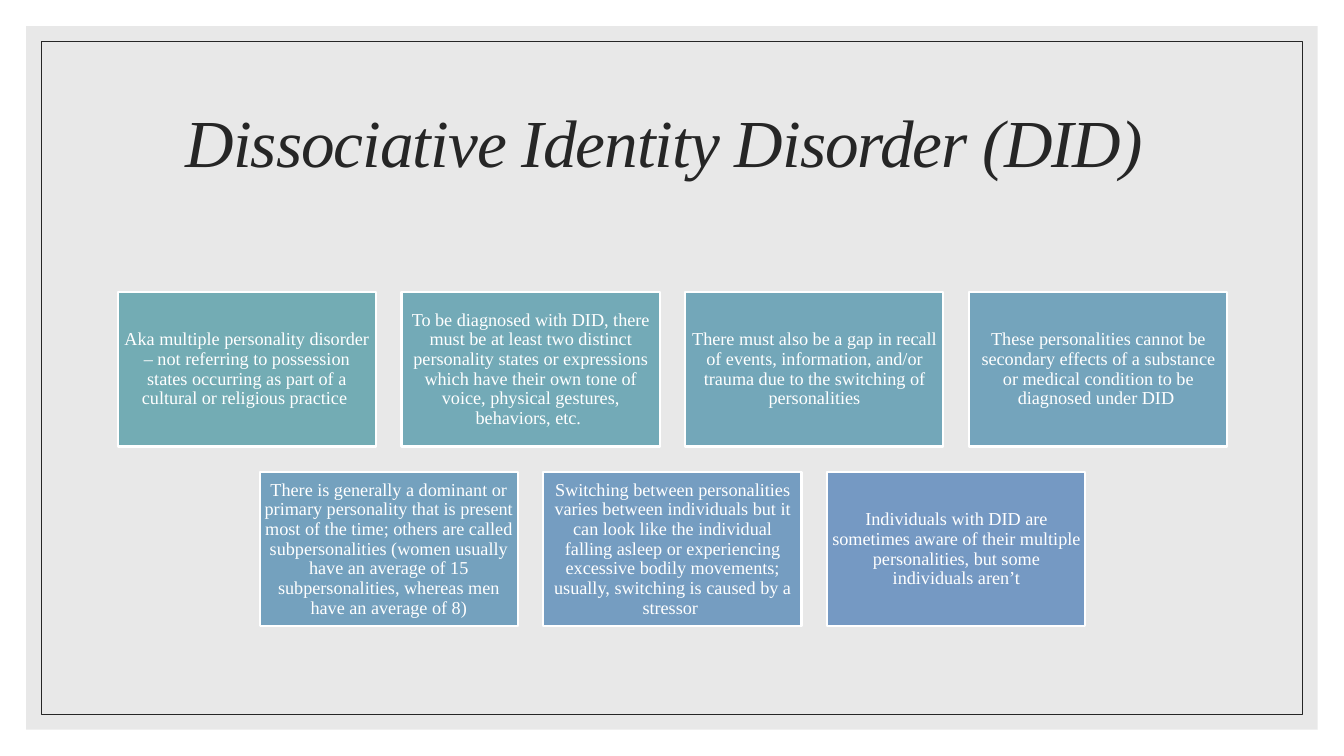
from dataclasses import dataclass

from lxml.etree import SubElement
from pptx import Presentation
from pptx.dml.color import RGBColor as Rgb
from pptx.enum.shapes import MSO_SHAPE as Shape
from pptx.enum.text import MSO_ANCHOR as Anchor, PP_ALIGN as Align
from pptx.oxml.ns import qn
from pptx.util import Inches, Pt


@dataclass(frozen=True)
class Theme:
    """Colours, typeface and sizes of the deck."""
    font: str = "Times New Roman"
    ink: str = "262626"
    paper: str = "FFFFFF"
    panel: str = "D9D9D9"
    panel_alpha: int = 60
    title_size: float = 48
    title_tracking: float = -0.7
    card_size: float = 13
    frame_line: float = 0.5
    card_line: float = 1.5
    line_spacing: float = 0.9


THEME = Theme()
WIDTH, HEIGHT = 13.33, 7.5
COLUMNS = 4
CARD_WIDTH, CARD_HEIGHT, GAP = 2.56, 1.53, 0.255
INSET = 0.05

TITLE = "Dissociative Identity Disorder (DID) "
CARDS = [
    ("73ACB4", "Aka multiple personality disorder – not referring to possession "
               "states occurring as part of a cultural or religious practice "),
    ("73AAB7", "To be diagnosed with DID, there must be at least two distinct "
               "personality states or expressions which have their own tone of "
               "voice, physical gestures, behaviors, etc. "),
    ("73A7B9", "There must also be a gap in recall of events, information, and/or "
               "trauma due to the switching of personalities"),
    ("74A4BC", "These personalities cannot be secondary effects of a substance or "
               "medical condition to be diagnosed under DID "),
    ("74A1BE", "There is generally a dominant or primary personality that is present "
               "most of the time; others are called subpersonalities (women usually "
               "have an average of 15 subpersonalities, whereas men have an average "
               "of 8)"),
    ("759DC1", "Switching between personalities varies between individuals but it can "
               "look like the individual falling asleep or experiencing excessive "
               "bodily movements; usually, switching is caused by a stressor "),
    ("7599C3", "Individuals with DID are sometimes aware of their multiple "
               "personalities, but some individuals aren’t"),
]


def add_rectangle(slide, box, fill=None, line=None, line_width=0):
    """Add a shadowless rectangle with optional fill and outline."""
    rectangle = slide.shapes.add_shape(Shape.RECTANGLE, *map(Inches, box))
    rectangle.shadow.inherit = False
    if fill:
        rectangle.fill.solid()
        rectangle.fill.fore_color.rgb = Rgb.from_string(fill)
    else:
        rectangle.fill.background()
    if line:
        rectangle.line.color.rgb = Rgb.from_string(line)
        rectangle.line.width = Pt(line_width)
    else:
        rectangle.line.fill.background()
    return rectangle


def write_centred(frame, wording, size, colour):
    """Write one centred paragraph in the frame and return its run."""
    frame.word_wrap = True
    frame.vertical_anchor = Anchor.MIDDLE
    paragraph = frame.paragraphs[0]
    paragraph.alignment = Align.CENTER
    paragraph.line_spacing = THEME.line_spacing
    run = paragraph.add_run()
    run.text = wording
    run.font.name = THEME.font
    run.font.size = Pt(size)
    run.font.color.rgb = Rgb.from_string(colour)
    return run


def add_backdrop(slide, box):
    """Draw the translucent panel and the thin frame inside the box."""
    def inner(margin):
        left, top, width, height = box
        return left + margin, top + margin, width - 2 * margin, height - 2 * margin

    panel = add_rectangle(slide, inner(0.26), THEME.panel)
    tint = panel.fill._xPr.find(qn("a:solidFill"))[0]
    SubElement(tint, qn("a:alpha"), val=str(THEME.panel_alpha * 1000))
    add_rectangle(slide, inner(0.41), line=THEME.ink, line_width=THEME.frame_line)


def add_title(slide, box):
    """Write the italic slide title in the box."""
    title = slide.shapes.add_textbox(*map(Inches, box))
    run = write_centred(title.text_frame, TITLE, THEME.title_size, THEME.ink)
    run.font.italic = True
    run.font._element.set("spc", str(round(THEME.title_tracking * 100)))


def add_card(slide, box, fill, wording):
    """Draw one coloured card with its statement."""
    card = add_rectangle(slide, box, fill, THEME.paper, THEME.card_line)
    frame = card.text_frame
    frame.margin_left = frame.margin_right = Inches(INSET)
    frame.margin_top = frame.margin_bottom = Inches(INSET)
    write_centred(frame, wording, THEME.card_size, THEME.paper)


def add_card_grid(slide, box):
    """Lay the cards out in rows, each centred in the box."""
    left, top, width, _ = box
    for start in range(0, len(CARDS), COLUMNS):
        row = CARDS[start:start + COLUMNS]
        row_width = len(row) * (CARD_WIDTH + GAP) - GAP
        row_left = left + (width - row_width) / 2
        row_top = top + start // COLUMNS * (CARD_HEIGHT + GAP)
        for column, (fill, wording) in enumerate(row):
            card_left = row_left + column * (CARD_WIDTH + GAP)
            add_card(slide, (card_left, row_top, CARD_WIDTH, CARD_HEIGHT), fill, wording)


def main():
    """Build the slide and save it."""
    deck = Presentation()
    deck.slide_width, deck.slide_height = Inches(WIDTH), Inches(HEIGHT)
    slide = deck.slides.add_slide(deck.slide_layouts[6])
    slide.background.fill.solid()
    slide.background.fill.fore_color.rgb = Rgb.from_string(THEME.paper)
    add_backdrop(slide, (0, 0, WIDTH, HEIGHT))
    add_title(slide, (1.17, 0.7, 11, 1.5))
    add_card_grid(slide, (1.17, 2.9, 11, 3.32))
    deck.save("out.pptx")


if __name__ == "__main__":
    main()
